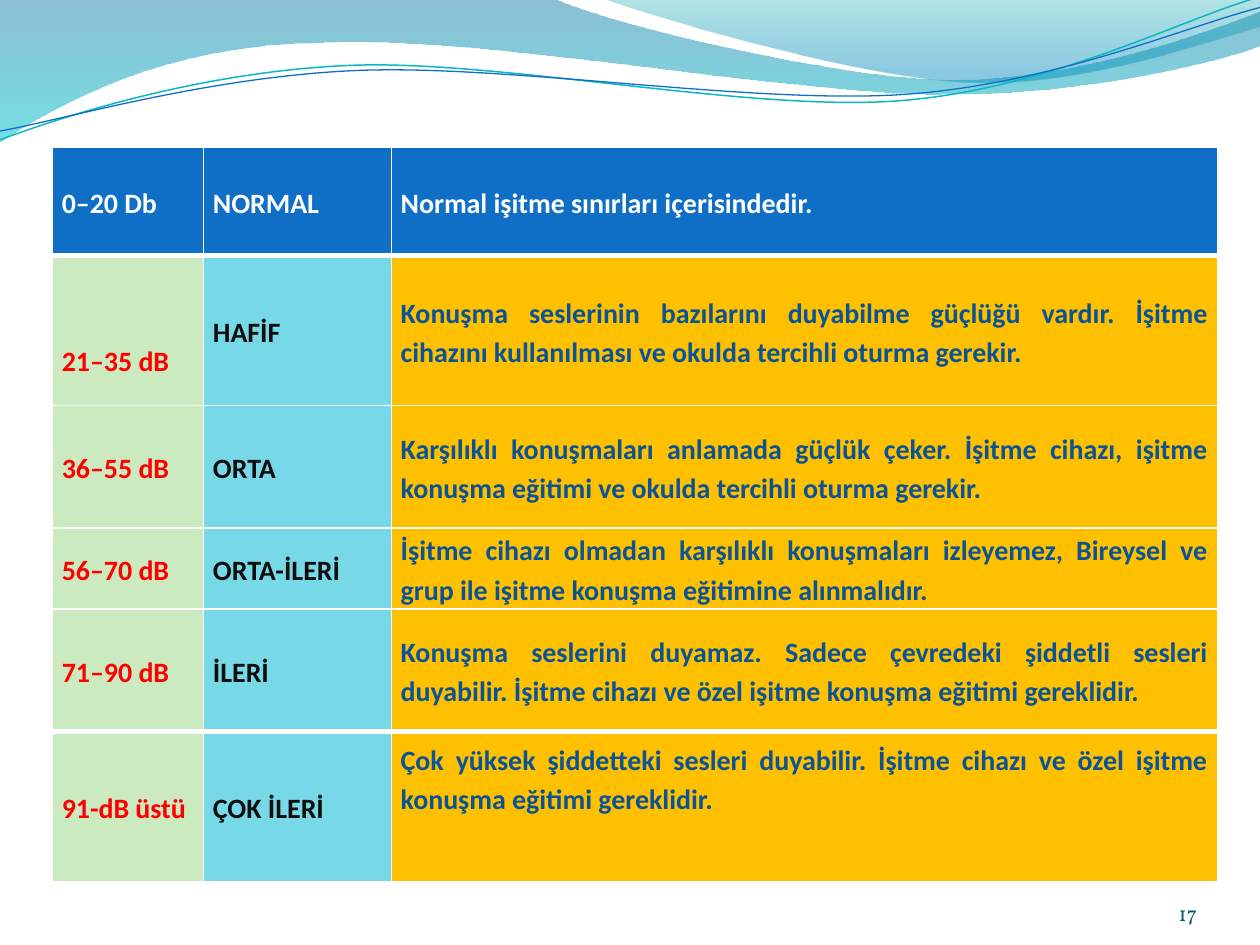
import math

from lxml import etree
from pptx import Presentation
from pptx import util as u
from pptx.dml.color import RGBColor
from pptx.enum import text
from pptx.oxml import ns

Pt = u.Pt
WHITE = RGBColor(0xFF, 0xFF, 0xFF)
BLUE = RGBColor(0x0F, 0x6F, 0xC6)
GREEN = RGBColor(0xCB, 0xEA, 0xC0)
CYAN = RGBColor(0x77, 0xD9, 0xE8)
AMBER = RGBColor(0xFF, 0xC0, 0x00)
RED = RGBColor(0xFF, 0x00, 0x00)
BLACK = RGBColor(0x0D, 0x0D, 0x0D)
NAVY = RGBColor(0x0B, 0x53, 0x94)
TEAL = RGBColor(0x0A, 0xB8, 0xBF)
NUMBER = RGBColor(0x04, 0x5D, 0x75)
BAND_TOP = RGBColor(0x00, 0x74, 0xA1)
BAND_END = RGBColor(0x00, 0xC6, 0xCF)
CREST_TOP = RGBColor(0x00, 0xA1, 0xA9)
CREST_END = RGBColor(0x00, 0x8B, 0xBF)

THIN, THICK = 1, 3
BLANK_LINE = 32.4  # one table line with its spacing
TILT = -2.7  # degrees, for the thin waves

# Outlines in points: a pair is a straight step, six numbers are a cubic curve
BAND = [(0, -0.7), (316.8, -0.7),
        (342.7, 12.2, 478.1, 45.4, 545.8, 45.4),
        (614.2, 45.4, 689.8, 18.7, 720, 6.5), (720.7, 25.9),
        (707.8, 31.7, 626.4, 54.7, 537.1, 54),
        (447.8, 54, 275, 20.2, 185, 24.5),
        (92.9, 25.2, 33.1, 59.8, -0.7, 81.4), (0, -0.7)]
CREST = [(344.9, -0.7),
         (366.5, 7.9, 491, 44.6, 553.7, 46.8),
         (616.3, 49.7, 691.9, 23, 720, 15.1), (720, 0), (344.9, -0.7)]
TEAL_WAVE = [(0, 79.9),
             (34.6, 67, 113.8, 41, 199.4, 37.4),
             (284.4, 33.8, 427, 64.1, 513.4, 57.6),
             (599.8, 51.1, 675.4, 10.8, 718.6, -1.4)]
BLUE_WAVE = [(0, 74.9),
             (33.8, 69.1, 118.1, 43.9, 203.8, 40.3),
             (290.2, 36.7, 429.8, 59.8, 516.2, 54),
             (601.9, 48.2, 677.5, 15.1, 720, 4.3)]

COLUMNS = [86.4, 107.3, 472.3]
HEIGHTS = [61.9, 85.7, 69.9, 46.4, 69.9, 85.7]
LEVELS = [
    ("0–20 Db", "NORMAL", "Normal işitme sınırları içerisindedir."),
    ("21–35 dB", "HAFİF",
     "Konuşma seslerinin bazılarını duyabilme güçlüğü vardır. İşitme "
     "cihazını kullanılması ve okulda tercihli oturma gerekir."),
    ("36–55 dB", "ORTA",
     "Karşılıklı konuşmaları anlamada güçlük çeker. İşitme cihazı, işitme "
     "konuşma eğitimi ve okulda tercihli oturma gerekir."),
    ("56–70 dB", "ORTA-İLERİ",
     "İşitme cihazı olmadan karşılıklı konuşmaları izleyemez, Bireysel ve "
     "grup ile işitme konuşma eğitimine alınmalıdır."),
    ("71–90 dB", "İLERİ",
     "Konuşma seslerini duyamaz. Sadece çevredeki şiddetli sesleri "
     "duyabilir. İşitme cihazı ve özel işitme konuşma eğitimi gereklidir."),
    ("91-dB üstü", "ÇOK İLERİ",
     "Çok yüksek şiddetteki sesleri duyabilir. İşitme cihazı ve özel işitme "
     "konuşma eğitimi gereklidir."),
]


def turn(points, center, degrees):
    """Turn points clockwise around a center."""
    cos, sin = math.cos(math.radians(degrees)), math.sin(math.radians(degrees))
    cx, cy = center
    return [(cx + (x - cx) * cos - (y - cy) * sin,
             cy + (x - cx) * sin + (y - cy) * cos) for x, y in points]


class Painter:
    body_font, body_size = "Calibri", 16
    number_font, number_size = "Vollkorn", 12

    def __init__(self, page):
        self.page = page

    def outline(self, outline, close, center=(0, 0), tilt=0):
        points = [step[i:i + 2] for step in outline for i in range(0, len(step), 2)]
        points = turn(points, center, -tilt)
        first, *rest = [(Pt(x), Pt(y)) for x, y in points]
        builder = self.page.shapes.build_freeform(*first, scale=1.0)
        builder.add_line_segments(rest, close=close)
        shape = builder.convert_to_shape()
        shape.shadow.inherit = False
        shape.rotation = tilt
        # Join each three steps of a curve into one cubic segment
        lines = iter(list(shape._element.iter(ns.qn("a:lnTo"))))
        for step in outline[1:]:
            line = next(lines)
            if len(step) == 6:
                line.tag_name = None
                cubic = etree.Element(ns.qn("a:cubicBezTo"))
                line.addprevious(cubic)
                for part in (line, next(lines), next(lines)):
                    cubic.append(part[0])
                    part.getparent().remove(part)
        return shape

    def wave(self, outline, stops):
        """Filled wave; each stop is position, colour and opacity percent."""
        shape = self.outline(outline, True)
        shape.line.fill.background()
        shape.fill.gradient()
        shape.fill.gradient_angle = 270
        for stop, (position, color, _) in zip(shape.fill.gradient_stops, stops):
            stop.position = position
            stop.color.rgb = color
        tones = shape._element.spPr.find(ns.qn("a:gradFill")).iter(ns.qn("a:srgbClr"))
        for tone, (_, _, opacity) in zip(tones, stops):
            etree.SubElement(tone, ns.qn("a:alpha"), val=str(opacity * 1000))

    def curve(self, outline, center, color, width):
        shape = self.outline(outline, False, center, TILT)
        shape.fill.background()
        shape.line.color.rgb = color
        shape.line.width = Pt(width)

    def span(self, para, words, font, size, color, bold=False):
        span = para.add_run()
        span.text = words
        span.font.name, span.font.size = font, Pt(size)
        span.font.color.rgb, span.font.bold = color, bold

    def borders(self, cell, top, bottom):
        props = cell._tc.get_or_add_tcPr()
        sides = {"L": THIN, "R": THIN, "T": top, "B": bottom}
        for place, (side, width) in enumerate(sides.items()):
            edge = etree.Element(ns.qn("a:ln" + side), w=str(Pt(width)))
            fill = etree.SubElement(edge, ns.qn("a:solidFill"))
            etree.SubElement(fill, ns.qn("a:srgbClr"), val=str(WHITE))
            props.insert(place, edge)

    def cell(self, cell, words, fill, color):
        cell.fill.solid()
        cell.fill.fore_color.rgb = fill
        cell.margin_left = cell.margin_right = Pt(5.4)
        cell.margin_top = cell.margin_bottom = Pt(0)
        cell.vertical_anchor = text.MSO_ANCHOR.MIDDLE
        para = cell.text_frame.paragraphs[0]
        para.alignment = text.PP_ALIGN.JUSTIFY
        para.line_spacing = 1.15
        para.space_after = Pt(10)
        self.span(para, words, self.body_font, self.body_size, color, True)

    def table(self, left, top, rows):
        frame = self.page.shapes.add_table(
            len(rows), len(COLUMNS), Pt(left), Pt(top),
            Pt(sum(COLUMNS)), Pt(sum(HEIGHTS)))
        table = frame.table
        table.horz_banding = False
        for column, width in zip(table.columns, COLUMNS):
            column.width = Pt(width)
        last = len(rows) - 1
        for r, (row, height) in enumerate(zip(rows, HEIGHTS)):
            table.rows[r].height = Pt(height)
            styles = [(GREEN, RED), (CYAN, BLACK), (AMBER, NAVY)]
            if r == 0:
                styles = [(BLUE, WHITE)] * len(COLUMNS)
            for c, (words, style) in enumerate(zip(row, styles)):
                self.cell(table.cell(r, c), words, *style)
                self.borders(table.cell(r, c),
                             THICK if r in (1, last) else THIN,
                             THICK if r in (0, last - 1) else THIN)
        return table

    def page_number(self, left, top, width, height, words):
        box = self.page.shapes.add_textbox(Pt(left), Pt(top), Pt(width), Pt(height))
        frame = box.text_frame
        frame.word_wrap = True
        frame.margin_left = frame.margin_right = Pt(0)
        frame.margin_top = frame.margin_bottom = Pt(0)
        frame.vertical_anchor = text.MSO_ANCHOR.BOTTOM
        para = frame.paragraphs[0]
        para.alignment = text.PP_ALIGN.RIGHT
        self.span(para, words, self.number_font, self.number_size, NUMBER)


def main():
    deck = Presentation()
    deck.slide_width, deck.slide_height = Pt(720), Pt(540)
    painter = Painter(deck.slides.add_slide(deck.slide_layouts[6]))
    # Waves along the top
    painter.wave(BAND, [(0, BAND_TOP, 45), (1, BAND_END, 55)])
    painter.wave(CREST, [(0, CREST_TOP, 30), (0.8, CREST_END, 45)])
    painter.curve(TEAL_WAVE, (359.3, 41.4), TEAL, 0.85)
    painter.curve(BLUE_WAVE, (359.6, 42.5), BLUE, 0.75)
    # Hearing levels; two cells sit a line lower or higher than the middle
    table = painter.table(29.9, 84.2, LEVELS)
    table.cell(1, 0).margin_top = Pt(BLANK_LINE)
    table.cell(5, 2).margin_bottom = Pt(BLANK_LINE)
    # Footer
    painter.page_number(624, 500.4, 60, 28.8, "17")
    deck.save("out.pptx")


if __name__ == "__main__":
    main()
